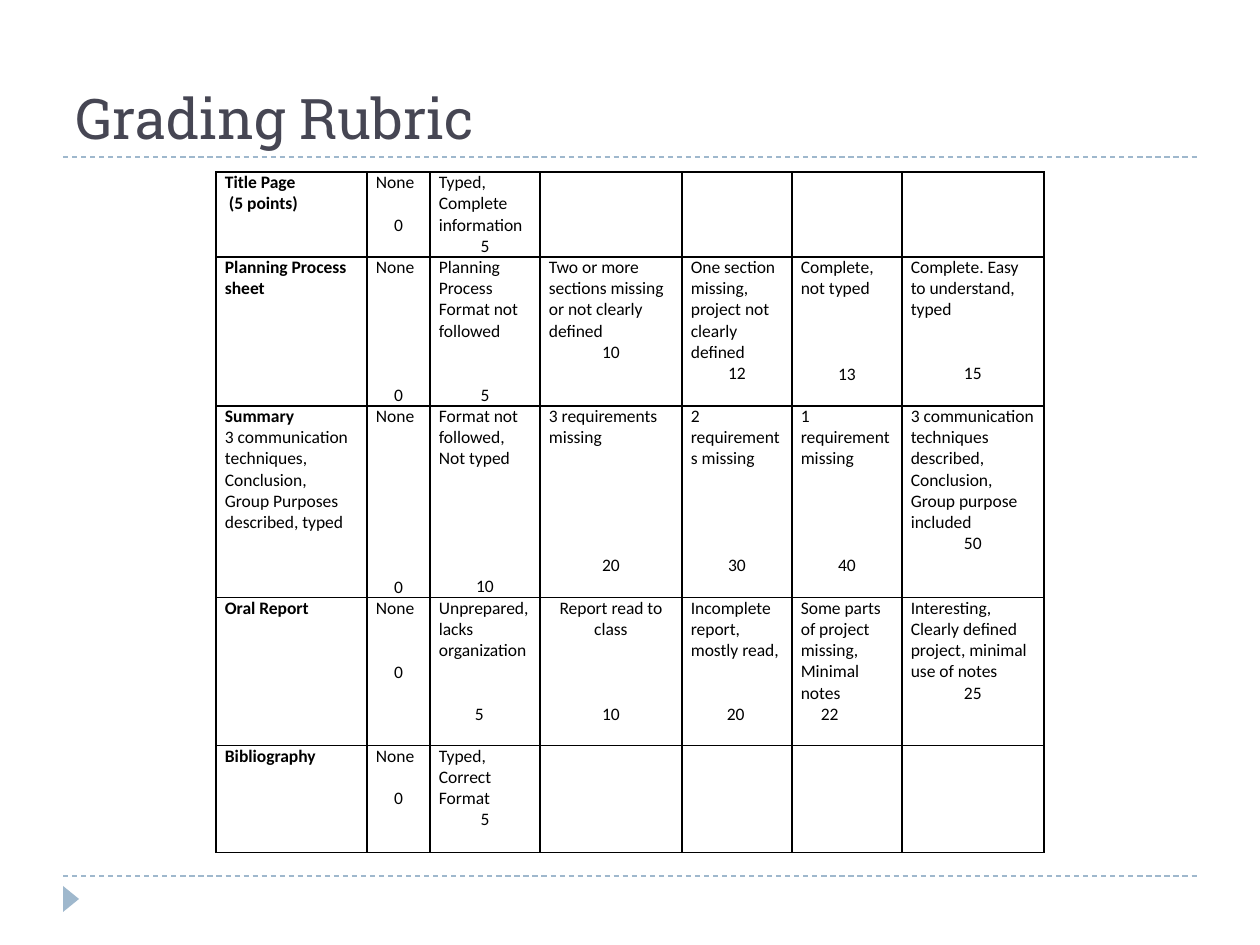
from lxml.etree import SubElement
from pptx import Presentation
from pptx.dml.color import RGBColor as RGB
from pptx.enum.dml import MSO_LINE
from pptx.enum.shapes import MSO_CONNECTOR, MSO_SHAPE
from pptx.enum.text import MSO_ANCHOR, PP_ALIGN as AL
from pptx.oxml.ns import qn
from pptx.util import Pt

TITLE = "Grading Rubric"
COLORS = {"title": "464653", "accent": "9FB8CD", "ink": "000000"}
COLS = [151, 63, 110, 142, 110, 110, 142]
ROWS = [85, 149, 191, 148, 107]
LEFT, TOP = 216, 172
LINE_PT = 12.2
RULES_Y = [876, 157]


def head(text, bold=True, indent=0):
    return dict(text=text, bold=bold, indent=indent)


def grade(text, score, gap=0, indent=None, align=AL.LEFT):
    place = dict(align=AL.CENTER) if indent is None else dict(indent=indent)
    return [dict(text=text, align=align), dict(text=score, gap=gap, **place)]


RUBRIC = [
    [[head("Title Page"), head("(5 points)", indent=4)],
     grade("None", "0", 1),
     grade("Typed, Complete information", "5")],
    [[head("Planning Process sheet")],
     grade("None", "0", 5),
     grade("Planning Process Format not followed", "5", 2),
     grade("Two or more sections missing or not clearly defined", "10"),
     grade("One section missing, project not clearly defined", "12"),
     grade("Complete, not typed", "13", 3),
     grade("Complete. Easy to understand, typed", "15", 2)],
    [[head("Summary"),
      head("3 communication techniques, Conclusion,", False),
      head("Group Purposes described, typed", False)],
     grade("None", "0", 7),
     grade("Format not followed, Not typed", "10", 5),
     grade("3 requirements missing", "20", 5),
     grade("2 requirements missing", "30", 4),
     grade("1 requirement missing", "40", 4),
     grade("3 communication techniques described, Conclusion, "
           "Group purpose included", "50")],
    [[head("Oral Report")],
     grade("None", "0", 2),
     grade("Unprepared, lacks organization", "5", 2, indent=36),
     grade("Report read to class", "10", 3, align=AL.CENTER),
     grade("Incomplete report, mostly read,", "20", 2, indent=36),
     grade("Some parts of project missing, Minimal notes", "22", indent=20),
     grade("Interesting, Clearly defined project, minimal use of notes", "25")],
    [[head("Bibliography")],
     grade("None", "0", 1),
     grade("Typed, Correct Format", "5")],
]


def px(n):
    return round(n * 914400 / 126)


def color(name):
    return RGB.from_string(COLORS[name])


def add_run(p, text, font, size, ink, bold=False):
    r = p.add_run()
    r.text = text
    r.font.name, r.font.size, r.font.bold = font, Pt(size), bold
    r.font.color.rgb = color(ink)


def add_rule(s, y):
    line = s.shapes.add_connector(MSO_CONNECTOR.STRAIGHT, px(63), px(y), px(1197), px(y))
    line.line.color.rgb = color("accent")
    line.line.width = Pt(0.75)
    line.line.dash_style = MSO_LINE.DASH
    SubElement(line._element.spPr, qn("a:effectLst"))


def add_marker(s):
    sp = s.shapes.add_shape(MSO_SHAPE.ISOSCELES_TRIANGLE, px(58), px(891), px(26), px(16))
    sp.rotation = 90
    sp.shadow.inherit = False
    sp.fill.solid()
    sp.fill.fore_color.rgb = color("accent")
    sp.line.fill.background()


def add_title(s):
    tf = s.shapes.add_textbox(px(63), px(21), px(1134), px(136)).text_frame
    tf.word_wrap = True
    tf.vertical_anchor = MSO_ANCHOR.BOTTOM
    add_run(tf.paragraphs[0], TITLE, "Roboto Slab", 32, "title")


def style_cell(cell):
    cell.margin_left = cell.margin_right = px(9)
    cell.margin_top = cell.margin_bottom = 0
    tcPr = cell._tc.get_or_add_tcPr()
    for side in ("lnL", "lnR", "lnT", "lnB"):
        ln = SubElement(tcPr, qn(f"a:{side}"), w=str(Pt(1)))
        fill = SubElement(ln, qn("a:solidFill"))
        SubElement(fill, qn("a:srgbClr"), val=COLORS["ink"])
    cell.fill.background()


def fill_cell(cell, paragraphs):
    tf = cell.text_frame
    for i, item in enumerate(paragraphs):
        p = tf.add_paragraph() if i else tf.paragraphs[0]
        p.alignment = item.get("align", AL.LEFT)
        p.space_before = Pt(LINE_PT * item.get("gap", 0))
        p._p.get_or_add_pPr().set("marL", str(px(item.get("indent", 0))))
        add_run(p, item["text"], "Calibri", 10, "ink", item.get("bold", False))


def add_rubric(s):
    table = s.shapes.add_table(len(ROWS), len(COLS), px(LEFT), px(TOP),
                               px(sum(COLS)), px(sum(ROWS))).table
    table.first_row = table.horz_banding = False
    for col, width in zip(table.columns, COLS):
        col.width = px(width)
    for row, height, content in zip(table.rows, ROWS, RUBRIC):
        row.height = px(height)
        for cell in row.cells:
            style_cell(cell)
        for cell, paragraphs in zip(row.cells, content):
            fill_cell(cell, paragraphs)


def main():
    prs = Presentation()
    prs.slide_width, prs.slide_height = px(1260), px(945)
    s = prs.slides.add_slide(prs.slide_layouts[6])
    for y in RULES_Y:
        add_rule(s, y)
    add_marker(s)
    add_title(s)
    add_rubric(s)
    prs.save("out.pptx")


if __name__ == "__main__":
    main()
